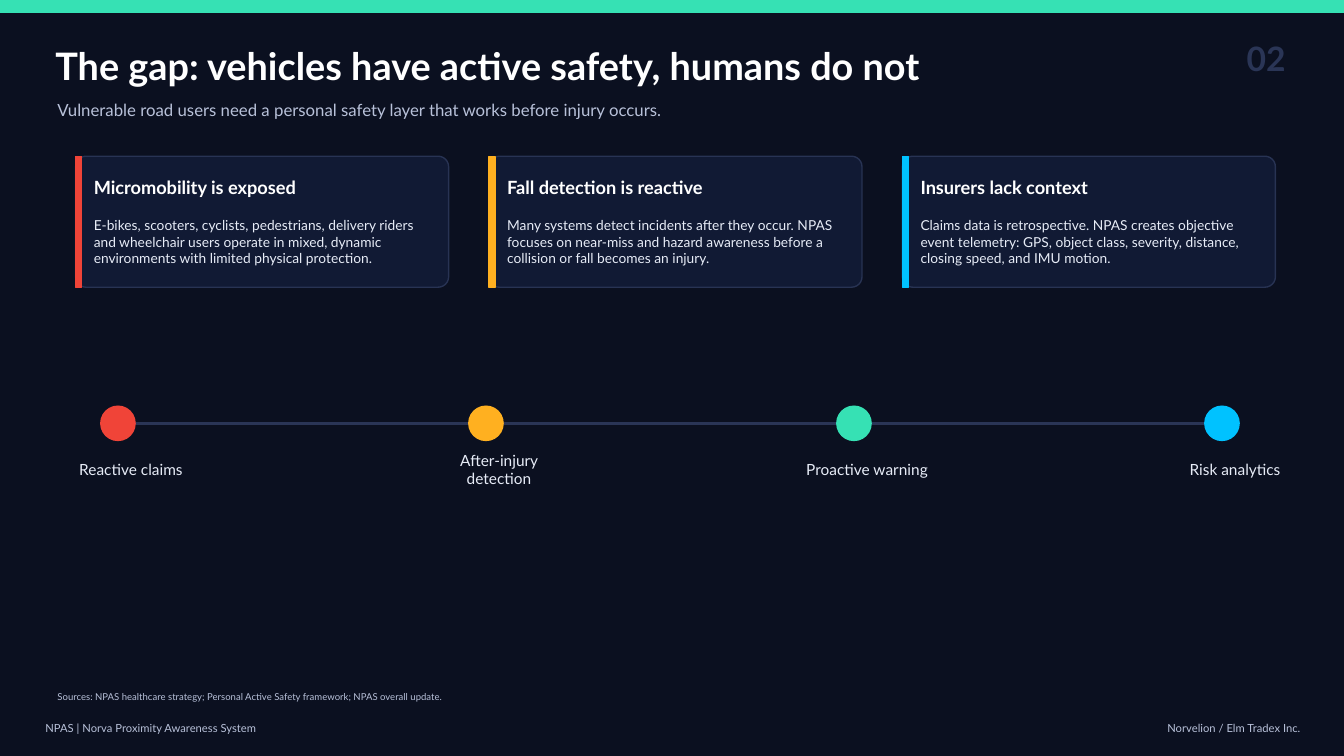
from typing import NamedTuple

from lxml.etree import SubElement
from pptx import Presentation
from pptx.dml.color import RGBColor
from pptx.enum.shapes import MSO_CONNECTOR, MSO_SHAPE
from pptx.enum.text import MSO_ANCHOR, PP_ALIGN
from pptx.oxml.ns import qn
from pptx.shapes.autoshape import Shape
from pptx.slide import Slide
from pptx.util import Emu, Pt

EMU_PER_PX = 9144  # 100 px to the inch
SLIDE_WIDTH, SLIDE_HEIGHT = 1333, 750

FONT = "Lato"
NIGHT, NAVY, SLATE = "0B1020", "111A34", "2A3556"
WHITE, PALE, MUTED = "FFFFFF", "E7ECF7", "B8C1D9"
RED, AMBER, MINT, BLUE = "F04438", "FFB020", "36E1B4", "00C2FF"

CARD_LEFT, CARD_TOP, CARD_PITCH = 75, 155, 410
CARD_WIDTH, CARD_HEIGHT = 370, 130
STAGE_LEFT, STAGE_PITCH, DOT_SIZE = 100, 365, 34
TIMELINE_Y, TIMELINE_END = 420, 1220


class Box(NamedTuple):
    left: int
    top: int
    width: int
    height: int


class Card(NamedTuple):
    accent: str
    heading: str
    body: str


class Stage(NamedTuple):
    accent: str
    label: str


CARDS = [
    Card(RED, "Micromobility is exposed",
         "E-bikes, scooters, cyclists, pedestrians, delivery riders and wheelchair users "
         "operate in mixed, dynamic environments with limited physical protection."),
    Card(AMBER, "Fall detection is reactive",
         "Many systems detect incidents after they occur. NPAS focuses on near-miss and "
         "hazard awareness before a collision or fall becomes an injury."),
    Card(BLUE, "Insurers lack context",
         "Claims data is retrospective. NPAS creates objective event telemetry: GPS, object "
         "class, severity, distance, closing speed, and IMU motion."),
]

STAGES = [
    Stage(RED, "Reactive claims"),
    Stage(AMBER, "After-injury detection"),
    Stage(MINT, "Proactive warning"),
    Stage(BLUE, "Risk analytics"),
]


def px(length: int) -> Emu:
    return Emu(length * EMU_PER_PX)


def color(hex_code: str) -> RGBColor:
    return RGBColor.from_string(hex_code)


def add_text(slide: Slide, box: Box, text: str, *, size: float, fill: str = PALE,
             bold: bool = False, align: PP_ALIGN = PP_ALIGN.LEFT) -> None:
    frame = slide.shapes.add_textbox(*map(px, box)).text_frame
    frame.word_wrap = True
    frame.vertical_anchor = MSO_ANCHOR.MIDDLE
    frame.margin_left = frame.margin_right = frame.margin_top = frame.margin_bottom = 0
    paragraph = frame.paragraphs[0]
    paragraph.alignment = align
    run = paragraph.add_run()
    run.text = text
    run.font.name = FONT
    run.font.size = Pt(size)
    run.font.bold = bold
    run.font.color.rgb = color(fill)


def add_panel(slide: Slide, kind: MSO_SHAPE, box: Box, fill: str,
              outline: str | None = None) -> Shape:
    """Add a filled shape, outlined in its own fill unless told otherwise."""
    panel = slide.shapes.add_shape(kind, *map(px, box))
    panel.shadow.inherit = False
    panel.fill.solid()
    panel.fill.fore_color.rgb = color(fill)
    panel.line.color.rgb = color(outline or fill)
    panel.line.width = Pt(1)
    return panel


def add_card(slide: Slide, left: int, card: Card) -> None:
    frame = Box(left, CARD_TOP, CARD_WIDTH, CARD_HEIGHT)
    panel = add_panel(slide, MSO_SHAPE.ROUNDED_RECTANGLE, frame, NAVY, SLATE)
    panel.adjustments[0] = 0.08
    outline_color = panel.element.spPr.find(qn("a:ln")).find(f".//{qn('a:srgbClr')}")
    SubElement(outline_color, qn("a:alpha"), val="95000")
    add_panel(slide, MSO_SHAPE.RECTANGLE, frame._replace(width=6), card.accent)
    add_text(slide, Box(left + 18, CARD_TOP + 18, 335, 25), card.heading,
             size=13, fill=WHITE, bold=True)
    add_text(slide, Box(left + 18, CARD_TOP + 56, 335, 58), card.body, size=9.8)


def add_timeline(slide: Slide) -> None:
    axis = slide.shapes.add_connector(
        MSO_CONNECTOR.STRAIGHT, px(STAGE_LEFT), px(TIMELINE_Y),
        px(TIMELINE_END), px(TIMELINE_Y))
    axis.line.color.rgb = color(SLATE)
    axis.line.width = Pt(2)
    SubElement(axis.element.spPr, qn("a:effectLst"))
    for index, stage in enumerate(STAGES):
        left = STAGE_LEFT + index * STAGE_PITCH
        add_panel(slide, MSO_SHAPE.OVAL,
                  Box(left, TIMELINE_Y - DOT_SIZE // 2, DOT_SIZE, DOT_SIZE), stage.accent)
        add_text(slide, Box(left - 40, TIMELINE_Y + 28, 140, 35), stage.label,
                 size=11, align=PP_ALIGN.CENTER)


def add_header(slide: Slide) -> None:
    add_panel(slide, MSO_SHAPE.RECTANGLE, Box(0, 0, SLIDE_WIDTH, 12), MINT)
    add_text(slide, Box(55, 42, 880, 45),
             "The gap: vehicles have active safety, humans do not",
             size=27, fill=WHITE, bold=True)
    add_text(slide, Box(57, 92, 950, 34),
             "Vulnerable road users need a personal safety layer that works before injury occurs.",
             size=12, fill=MUTED)
    add_text(slide, Box(1185, 36, 90, 44), "02",
             size=24, fill=SLATE, bold=True, align=PP_ALIGN.RIGHT)


def add_footer(slide: Slide) -> None:
    add_text(slide, Box(57, 682, 1210, 18),
             "Sources: NPAS healthcare strategy; Personal Active Safety framework; "
             "NPAS overall update.", size=6.8, fill=MUTED)
    add_text(slide, Box(45, 712, 600, 20), "NPAS | Norva Proximity Awareness System",
             size=8, fill=MUTED)
    add_text(slide, Box(1010, 712, 280, 20), "Norvelion / Elm Tradex Inc.",
             size=8, fill=MUTED, align=PP_ALIGN.RIGHT)


def main() -> None:
    deck = Presentation()
    deck.slide_width, deck.slide_height = px(SLIDE_WIDTH), px(SLIDE_HEIGHT)
    slide = deck.slides.add_slide(deck.slide_layouts[6])
    slide.background.fill.solid()
    slide.background.fill.fore_color.rgb = color(NIGHT)
    add_header(slide)
    for index, card in enumerate(CARDS):
        add_card(slide, CARD_LEFT + index * CARD_PITCH, card)
    add_timeline(slide)
    add_footer(slide)
    deck.save("out.pptx")


if __name__ == "__main__":
    main()
